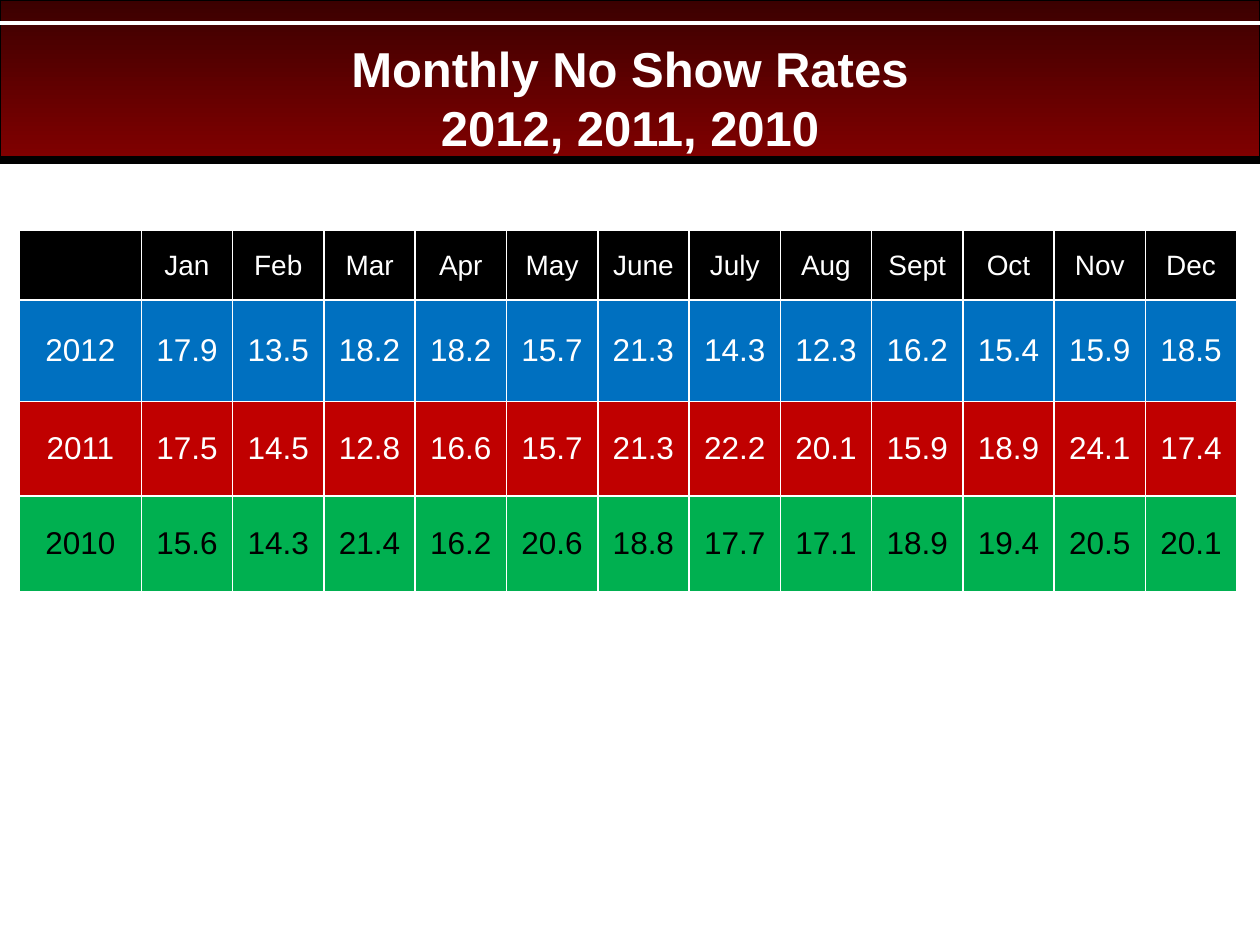
"""Build a slide with a table of monthly no show rates for three years."""
from lxml.etree import SubElement
from pptx import Presentation
from pptx.dml.color import RGBColor
from pptx.enum.shapes import MSO_CONNECTOR as Connector, MSO_SHAPE as Shape
from pptx.enum.text import MSO_ANCHOR as Anchor, PP_ALIGN as Align
from pptx.oxml.ns import qn
from pptx.util import Cm, Pt

COLORS = {
    "white": "FFFFFF",
    "black": "000000",
    "dark_red": "3B0000",
    "maroon": "800000",
    "blue": "0070C0",
    "red": "C00000",
    "green": "00B050",
}
MONTHS = "Jan Feb Mar Apr May June July Aug Sept Oct Nov Dec"
RATES = {
    "2012": "17.9 13.5 18.2 18.2 15.7 21.3 14.3 12.3 16.2 15.4 15.9 18.5",
    "2011": "17.5 14.5 12.8 16.6 15.7 21.3 22.2 20.1 15.9 18.9 24.1 17.4",
    "2010": "15.6 14.3 21.4 16.2 20.6 18.8 17.7 17.1 18.9 19.4 20.5 20.1",
}
ROW_STYLES = [
    {"height": 1.4, "fill": "black", "color": "white", "size": 16},
    {"height": 2.04, "fill": "blue", "color": "white", "size": 18},
    {"height": 1.91, "fill": "red", "color": "white", "size": 18},
    {"height": 1.92, "fill": "green", "color": "black", "size": 18},
]


def rgb(name):
    return RGBColor.from_string(COLORS[name])


def write(frame, text, size=18, color="black", bold=False, font="Arial"):
    paragraph = frame.paragraphs[0]
    paragraph.text = text
    paragraph.alignment = Align.CENTER
    for run in paragraph.runs:
        run.font.name = font
        run.font.size = Pt(size)
        run.font.bold = bold
        run.font.color.rgb = rgb(color)


class SlideBuilder:
    def __init__(self, slide, width, border_color="white", border_width=1):
        self.slide = slide
        self.width = width
        self.border_color = border_color
        self.border_width = border_width

    def banner(self, height, top_color, bottom_color):
        shape = self.slide.shapes.add_shape(Shape.RECTANGLE, 0, 0, self.width, Cm(height))
        shape.shadow.inherit = False
        shape.fill.gradient()
        shape.fill.gradient_angle = 270
        for stop, color, position in zip(
            shape.fill.gradient_stops, (top_color, bottom_color), (0, 1)
        ):
            stop.color.rgb = rgb(color)
            stop.position = position
        shape.line.color.rgb = rgb("black")
        shape.line.width = Pt(0.75)

    def rule(self, top, color, weight):
        line = self.slide.shapes.add_connector(
            Connector.STRAIGHT, 0, Cm(top), self.width, Cm(top)
        )
        line.line.color.rgb = rgb(color)
        line.line.width = Pt(weight)
        SubElement(line._element.spPr, qn("a:effectLst"))

    def title(self, text, left, top, width, height):
        box = self.slide.shapes.add_textbox(Cm(left), Cm(top), Cm(width), Cm(height))
        box.text_frame.word_wrap = True
        box.text_frame.vertical_anchor = Anchor.MIDDLE
        write(box.text_frame, text, size=28, color="white", bold=True)

    def borders(self, cell):
        properties = cell._tc.get_or_add_tcPr()
        for side in ("lnL", "lnR", "lnT", "lnB"):
            line = SubElement(properties, qn(f"a:{side}"), w=str(Pt(self.border_width)))
            fill = SubElement(line, qn("a:solidFill"))
            SubElement(fill, qn("a:srgbClr"), val=COLORS[self.border_color])

    def table(self, rows, styles, left, top, label_width, value_width):
        widths = [label_width] + [value_width] * (len(rows[0]) - 1)
        height = sum(style["height"] for style in styles)
        table = self.slide.shapes.add_table(
            len(rows), len(widths), Cm(left), Cm(top), Cm(sum(widths)), Cm(height)
        ).table
        for column, width in zip(table.columns, widths):
            column.width = Cm(width)
        for row, texts, style in zip(table.rows, rows, styles):
            row.height = Cm(style["height"])
            for cell, text in zip(row.cells, texts):
                self.borders(cell)
                cell.fill.solid()
                cell.fill.fore_color.rgb = rgb(style["fill"])
                cell.vertical_anchor = Anchor.MIDDLE
                write(cell.text_frame, text, size=style["size"], color=style["color"])


def main():
    presentation = Presentation()
    presentation.slide_width = Cm(25.4)
    presentation.slide_height = Cm(19.05)
    slide = presentation.slides.add_slide(presentation.slide_layouts[6])
    builder = SlideBuilder(slide, presentation.slide_width)
    builder.banner(3.18, "dark_red", "maroon")
    builder.rule(3.23, "black", 4.5)
    builder.rule(0.46, "white", 2.25)
    builder.title("Monthly No Show Rates\v2012, 2011, 2010", 1.27, 0.76, 22.86, 2.41)
    rows = [["", *MONTHS.split()]]
    rows += [[year, *rates.split()] for year, rates in RATES.items()]
    builder.table(rows, ROW_STYLES, 0.39, 4.65, 2.46, 1.84)
    presentation.save("out.pptx")


if __name__ == "__main__":
    main()
